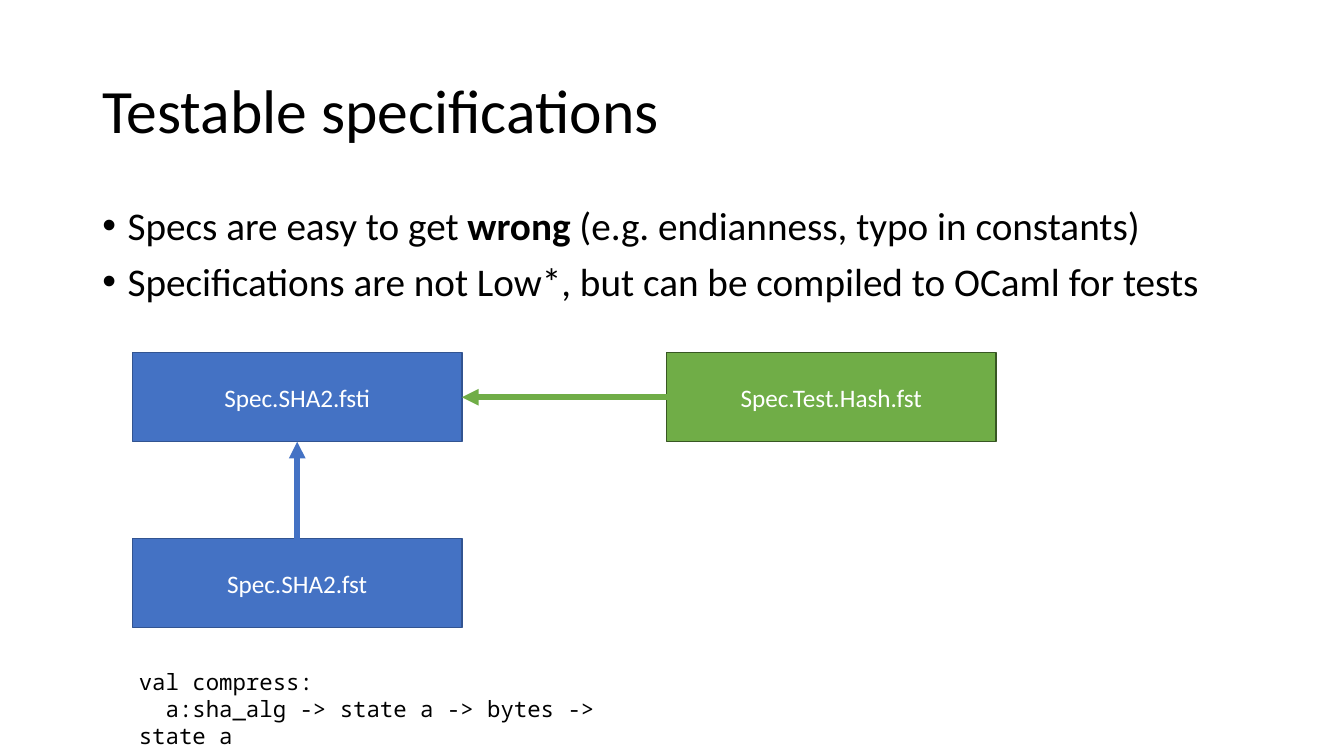
from lxml import etree
from pptx import Presentation
from pptx.dml.color import RGBColor
from pptx.enum.shapes import MSO_CONNECTOR, MSO_SHAPE
from pptx.enum.text import MSO_ANCHOR, PP_ALIGN
from pptx.oxml.ns import qn
from pptx.util import Cm, Pt

RECT = MSO_SHAPE.RECTANGLE
STRAIGHT = MSO_CONNECTOR.STRAIGHT
TOP, MIDDLE = MSO_ANCHOR.TOP, MSO_ANCHOR.MIDDLE
CENTER = PP_ALIGN.CENTER
TOP_SIDE, LEFT_SIDE, BOTTOM_SIDE, RIGHT_SIDE = range(4)

BLACK, WHITE = "000000", "FFFFFF"
BLUE, DARK_BLUE = "4472C4", "325491"
GREEN, DARK_GREEN = "70AD47", "385723"


def rgb(code):
    return RGBColor.from_string(code)


def add_run(p, text, size, color=BLACK, font="Calibri", bold=False):
    r = p.add_run()
    r.text = text
    r.font.name = font
    r.font.size = Pt(size)
    r.font.bold = bold
    r.font.color.rgb = rgb(color)


prs = Presentation()
prs.slide_width, prs.slide_height = Cm(33.87), Cm(19.05)
s = prs.slides.add_slide(prs.slide_layouts[6])

# Title, bullets and code
frames = {}
for name, left, top, width, height, anchor in [
    ("title", 2.33, 1.01, 29.21, 3.68, MIDDLE),
    ("bullets", 2.33, 5.07, 29.21, 12.09, TOP),
    ("code", 3.25, 16.71, 13.54, 1.62, TOP),
]:
    tf = s.shapes.add_textbox(Cm(left), Cm(top), Cm(width), Cm(height)).text_frame
    tf.word_wrap = True
    tf.vertical_anchor = anchor
    frames[name] = tf

p = frames["title"].paragraphs[0]
p.line_spacing = 0.9
add_run(p, "Testable specifications", 44)

bullets = [
    [("Specs are easy to get ", False), ("wrong", True),
     (" (e.g. endianness, typo in constants)", False)],
    [("Specifications are not Low*, but can be compiled to OCaml for tests", False)],
]
tf = frames["bullets"]
for i, parts in enumerate(bullets):
    p = tf.add_paragraph() if i else tf.paragraphs[0]
    p.line_spacing = 0.9
    p.space_before = Pt(10)
    pPr = p._p.get_or_add_pPr()
    pPr.set("marL", str(Cm(0.635)))
    pPr.set("indent", str(-Cm(0.635)))
    etree.SubElement(pPr, qn("a:buFont"), typeface="Arial")
    etree.SubElement(pPr, qn("a:buChar"), char="•")
    for text, bold in parts:
        add_run(p, text, 28, bold=bold)

p = frames["code"].paragraphs[0]
add_run(p, "val compress:", 16, font="Noto Sans Mono")
p.add_line_break()
add_run(p, "  a:sha_alg -> state a -> bytes -> state a", 16, font="Noto Sans Mono")

# Module boxes
modules = {}
for name, left, top, fill, line in [
    ("Spec.SHA2.fst", 3.34, 13.57, BLUE, DARK_BLUE),
    ("Spec.SHA2.fsti", 3.34, 8.89, BLUE, DARK_BLUE),
    ("Spec.Test.Hash.fst", 16.8, 8.89, GREEN, DARK_GREEN),
]:
    sp = s.shapes.add_shape(RECT, Cm(left), Cm(top), Cm(8.3), Cm(2.24))
    sp.shadow.inherit = False
    sp.fill.solid()
    sp.fill.fore_color.rgb = rgb(fill)
    sp.line.color.rgb = rgb(line)
    sp.line.width = Pt(1)
    tf = sp.text_frame
    tf.word_wrap = True
    tf.vertical_anchor = MIDDLE
    p = tf.paragraphs[0]
    p.alignment = CENTER
    add_run(p, name, 18, WHITE)
    modules[name] = sp

# Arrows to the interface
interface = modules["Spec.SHA2.fsti"]
for name, start_side, end_side, color in [
    ("Spec.SHA2.fst", TOP_SIDE, BOTTOM_SIDE, BLUE),
    ("Spec.Test.Hash.fst", LEFT_SIDE, RIGHT_SIDE, GREEN),
]:
    arrow = s.shapes.add_connector(STRAIGHT, 0, 0, 0, 0)
    arrow.begin_connect(modules[name], start_side)
    arrow.end_connect(interface, end_side)
    arrow.line.color.rgb = rgb(color)
    arrow.line.width = Pt(4)
    etree.SubElement(arrow.line._get_or_add_ln(), qn("a:tailEnd"), type="triangle")
    etree.SubElement(arrow._element.spPr, qn("a:effectLst"))

prs.save("out.pptx")
